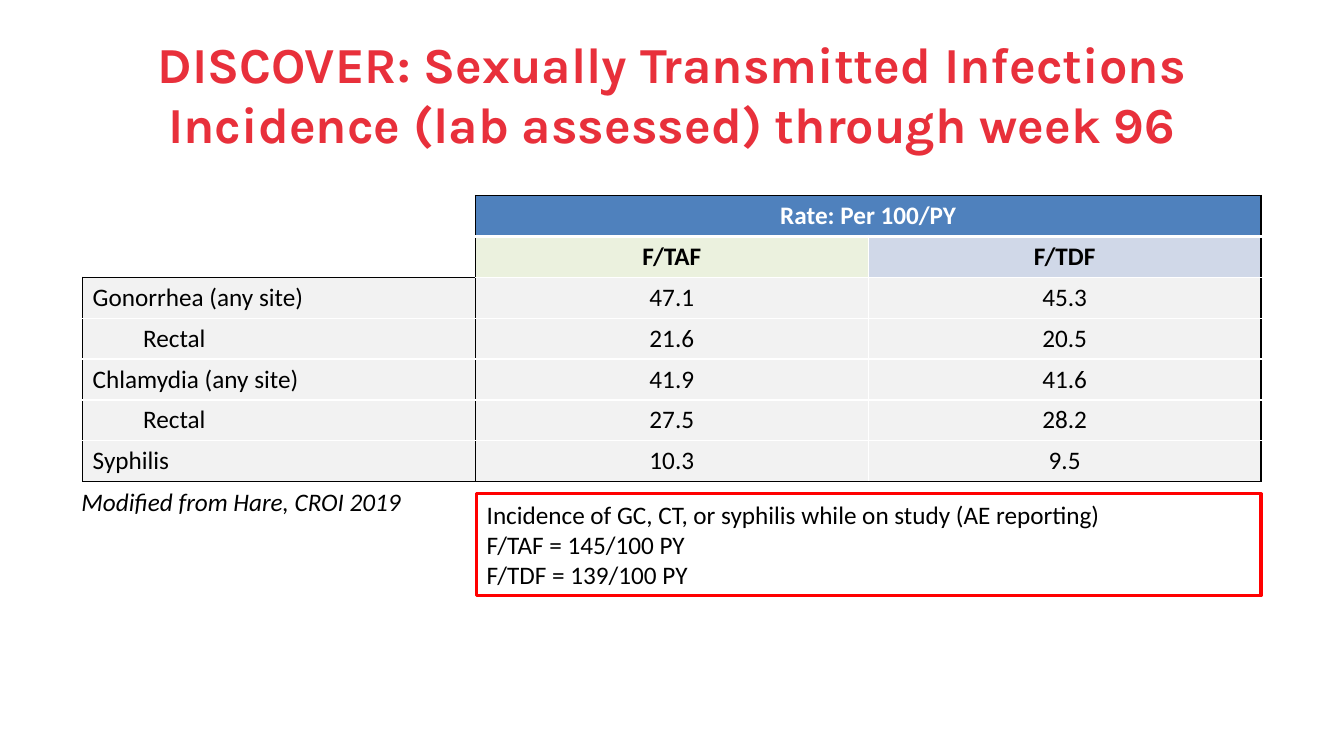
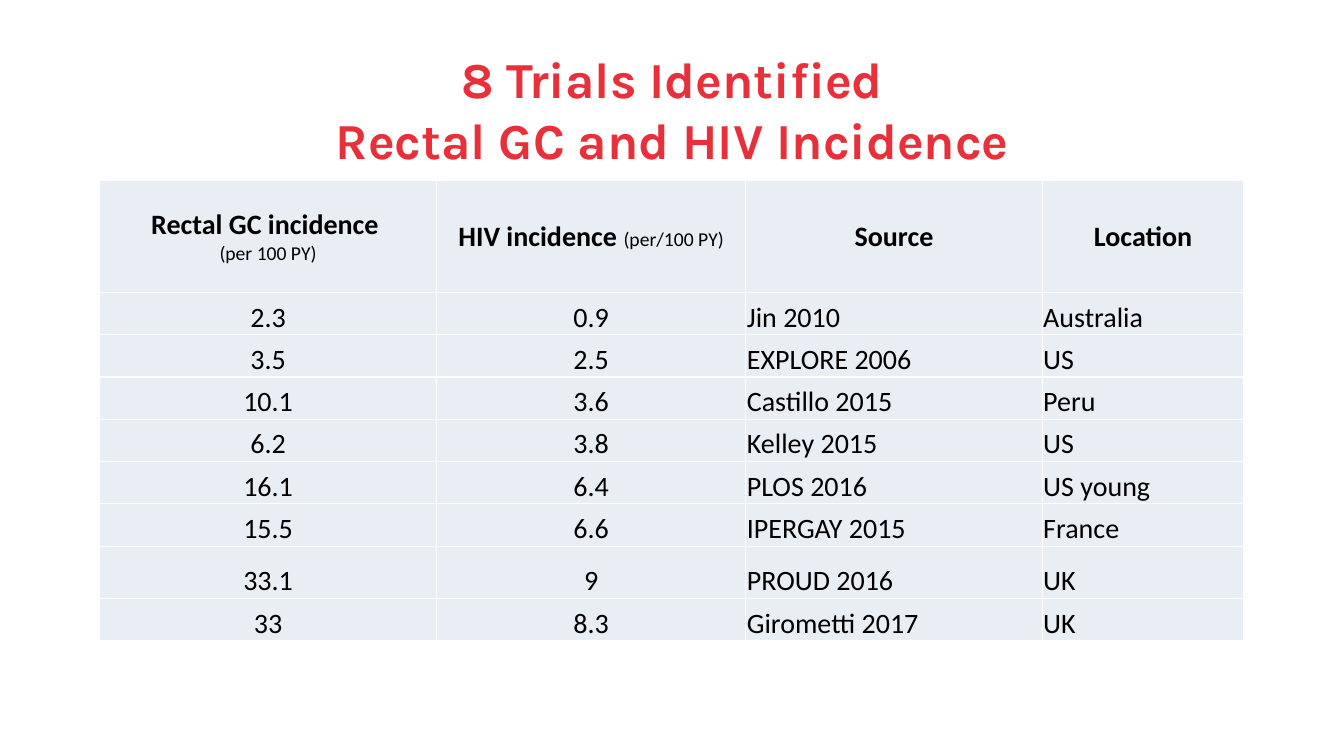
from lxml import etree
from pptx import Presentation, util as u
from pptx.dml.color import RGBColor
from pptx.enum import shapes, text
from pptx.oxml import ns

PX = 9144
FONT = "Calibri"
TITLE_FONT = "Karla"
COLORS = {
    "title": "E8303B",
    "ink": "000000",
    "white": "FFFFFF",
    "header": "4F81BD",
    "taf": "EBF1DE",
    "tdf": "D0D8E8",
    "body": "F2F2F2",
    "trials": "E9EDF4",
    "alert": "FF0000",
}
LEFT, CENTER = text.PP_ALIGN.LEFT, text.PP_ALIGN.CENTER


def add_span(para, words, size, color="ink", bold=False, italic=False, font=FONT):
    span = para.add_run()
    span.text = words
    span.font.name = font
    span.font.size = u.Pt(size)
    span.font.bold = bold
    span.font.italic = italic
    span.font.color.rgb = RGBColor.from_string(COLORS[color])


def style_cell(cell, fill, edges):
    props = cell._tc.get_or_add_tcPr()
    for side, (color, width) in edges.items():
        line = etree.SubElement(props, ns.qn(f"a:ln{side}"), w=str(u.Pt(width)))
        solid = etree.SubElement(line, ns.qn("a:solidFill"))
        etree.SubElement(solid, ns.qn("a:srgbClr"), val=COLORS[color])
    cell.fill.solid()
    cell.fill.fore_color.rgb = RGBColor.from_string(COLORS[fill])


deck = Presentation()
deck.slide_width = u.Inches(13.333)
deck.slide_height = u.Inches(7.5)

titles = [
    (("DISCOVER: Sexually Transmitted Infections",
      "Incidence (lab assessed) through week 96"), (82, 30, 1169, 125)),
    (("8 Trials Identified", "Rectal GC and HIV Incidence"), (217, 58, 900, 100)),
]
pages = []
for lines, place in titles:
    page = deck.slides.add_slide(deck.slide_layouts[5])
    title = page.shapes.title
    title.left, title.top, title.width, title.height = [n * PX for n in place]
    title.text_frame.auto_size = text.MSO_AUTO_SIZE.NONE
    title.text_frame.vertical_anchor = text.MSO_ANCHOR.MIDDLE
    para = title.text_frame.paragraphs[0]
    para.alignment = CENTER
    for number, words in enumerate(lines):
        if number:
            para.add_line_break()
        add_span(para, words, 36, "title", bold=True, font=TITLE_FONT)
    pages.append(page)
infections_page, trials_page = pages

rates = [
    ("", "Rate: Per 100/PY", ""),
    ("", "F/TAF", "F/TDF"),
    ("Gonorrhea (any site)", "47.1", "45.3"),
    ("Rectal", "21.6", "20.5"),
    ("Chlamydia (any site)", "41.9", "41.6"),
    ("Rectal", "27.5", "28.2"),
    ("Syphilis", "10.3", "9.5"),
]
header_fills = [("white", "header", "header"), ("white", "taf", "tdf")]
last = len(rates) - 1
table = infections_page.shapes.add_table(
    len(rates), 3, 82 * PX, 194 * PX, 1169 * PX, 284 * PX).table
table.first_row = table.horz_banding = False
for r, values in enumerate(rates):
    for c, words in enumerate(values):
        cell = table.cell(r, c)
        black = {
            "L": c == 1 or (c == 0 and r > 1),
            "R": c != 1 or r == 0,
            "T": (r == 0 and c > 0) or (r == 2 and c == 0),
            "B": r == last or (r == 1 and c == 0),
        }
        if c == 0 and r < 2:
            black["L"] = False
        edges = {side: ("ink" if dark else "white", 1) for side, dark in black.items()}
        if r < 2:
            edges["B" if r == 0 else "T"] = ("white", 3)
        style_cell(cell, header_fills[r][c] if r < 2 else "body", edges)
        para = cell.text_frame.paragraphs[0]
        para.alignment = CENTER if c else LEFT
        if words == "Rectal":
            para.level = 1
            para._p.get_or_add_pPr().set("marL", str(50 * PX))
        if words:
            add_span(para, words, 18, "ink" if r else "white", bold=r < 2)
table.cell(0, 1).merge(table.cell(0, 2))

summary = infections_page.shapes.add_shape(
    shapes.MSO_SHAPE.RECTANGLE, 473 * PX, 490 * PX, 778 * PX, 101 * PX)
summary.shadow.inherit = False
summary.fill.background()
summary.line.color.rgb = RGBColor.from_string(COLORS["alert"])
summary.line.width = u.Pt(2.25)
credit = infections_page.shapes.add_textbox(71 * PX, 478 * PX, 463 * PX, 40 * PX)
notes = [
    (summary, False, ["Incidence of GC, CT, or syphilis while on study (AE reporting)",
                      "F/TAF = 145/100 PY", "F/TDF = 139/100 PY"]),
    (credit, True, ["Modified from Hare, CROI 2019"]),
]
for box, italic, lines in notes:
    frame = box.text_frame
    frame.word_wrap = True
    frame.auto_size = text.MSO_AUTO_SIZE.SHAPE_TO_FIT_TEXT
    frame.vertical_anchor = text.MSO_ANCHOR.TOP
    for number, words in enumerate(lines):
        para = frame.add_paragraph() if number else frame.paragraphs[0]
        para.alignment = LEFT
        add_span(para, words, 18, italic=italic)

trial_headers = [
    [[("Rectal GC incidence ", 20)], [("(per 100 PY)", 14)]],
    [[("HIV incidence ", 20), ("(per/100 PY)", 14)]],
    [[("Source", 20)]],
    [[("Location", 20)]],
]
trials = [
    ("2.3", "0.9", "Jin 2010", "Australia"),
    ("3.5", "2.5", "EXPLORE 2006", "US"),
    ("10.1", "3.6", "Castillo 2015", "Peru"),
    ("6.2", "3.8", "Kelley 2015", "US"),
    ("16.1", "6.4", "PLOS 2016", "US young"),
    ("15.5", "6.6", "IPERGAY 2015", "France"),
    ("33.1", "9", "PROUD 2016", "UK"),
    ("33", "8.3", "Girometti 2017", "UK"),
]
grid = [trial_headers] + [[[[(words, 20)]] for words in row] for row in trials]
widths = [334, 307, 294, 200]
heights = [111] + [42] * 6 + [52, 42]
table = trials_page.shapes.add_table(
    len(grid), len(widths), 99 * PX, 179 * PX, sum(widths) * PX, sum(heights) * PX).table
table.first_row = table.horz_banding = False
for column, width in zip(table.columns, widths):
    column.width = width * PX
for row, height in zip(table.rows, heights):
    row.height = height * PX
for r, row in enumerate(grid):
    for c, lines in enumerate(row):
        cell = table.cell(r, c)
        style_cell(cell, "trials", {side: ("white", 1) for side in "LRTB"})
        cell.margin_left = cell.margin_right = cell.margin_top = PX
        cell.margin_bottom = 0
        cell.vertical_anchor = text.MSO_ANCHOR.BOTTOM if r else text.MSO_ANCHOR.MIDDLE
        for number, spans in enumerate(lines):
            frame = cell.text_frame
            para = frame.add_paragraph() if number else frame.paragraphs[0]
            para.alignment = CENTER if r == 0 or c < 2 else LEFT
            for words, size in spans:
                add_span(para, words, size, bold=r == 0 and size == 20)

deck.save("out.pptx")
